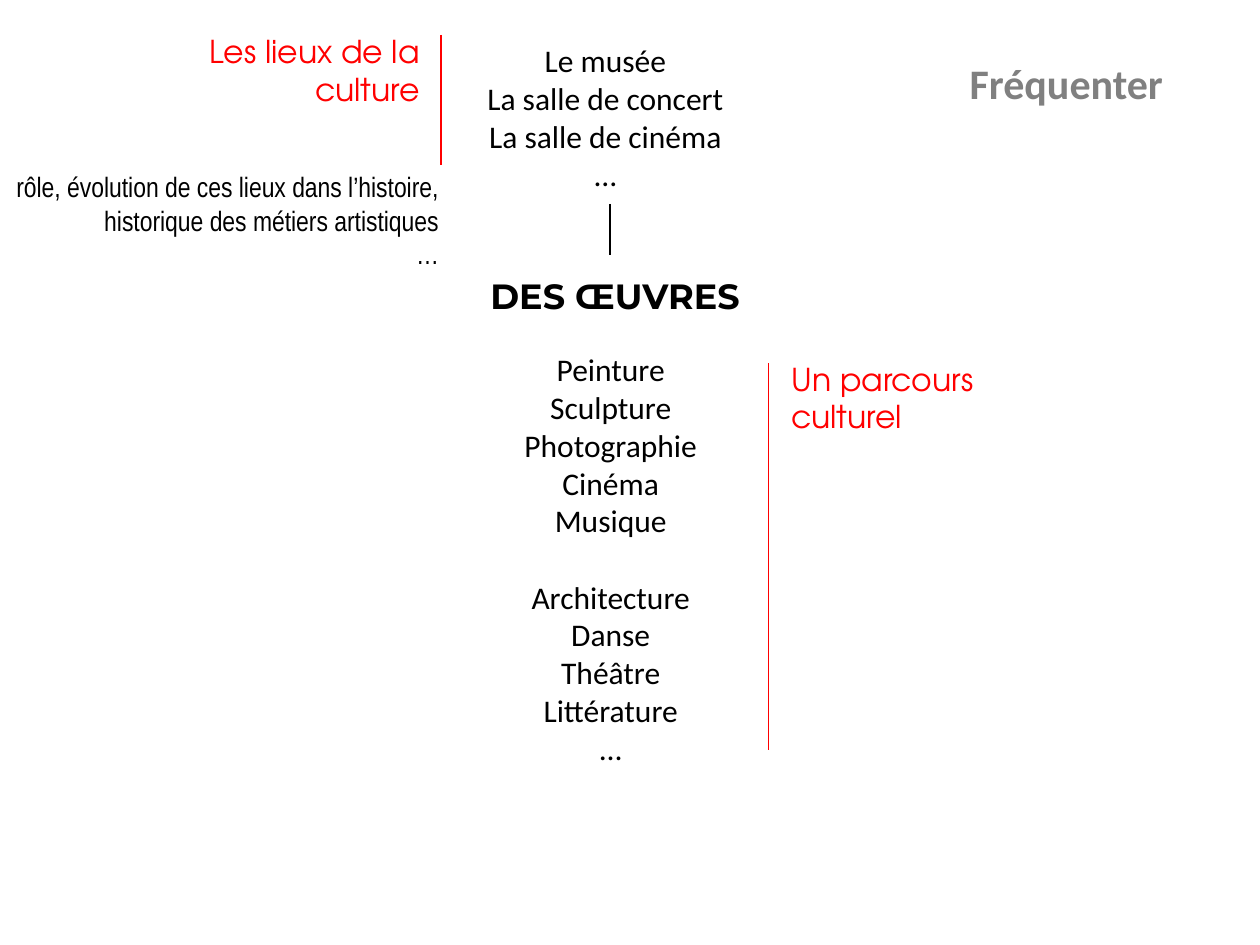
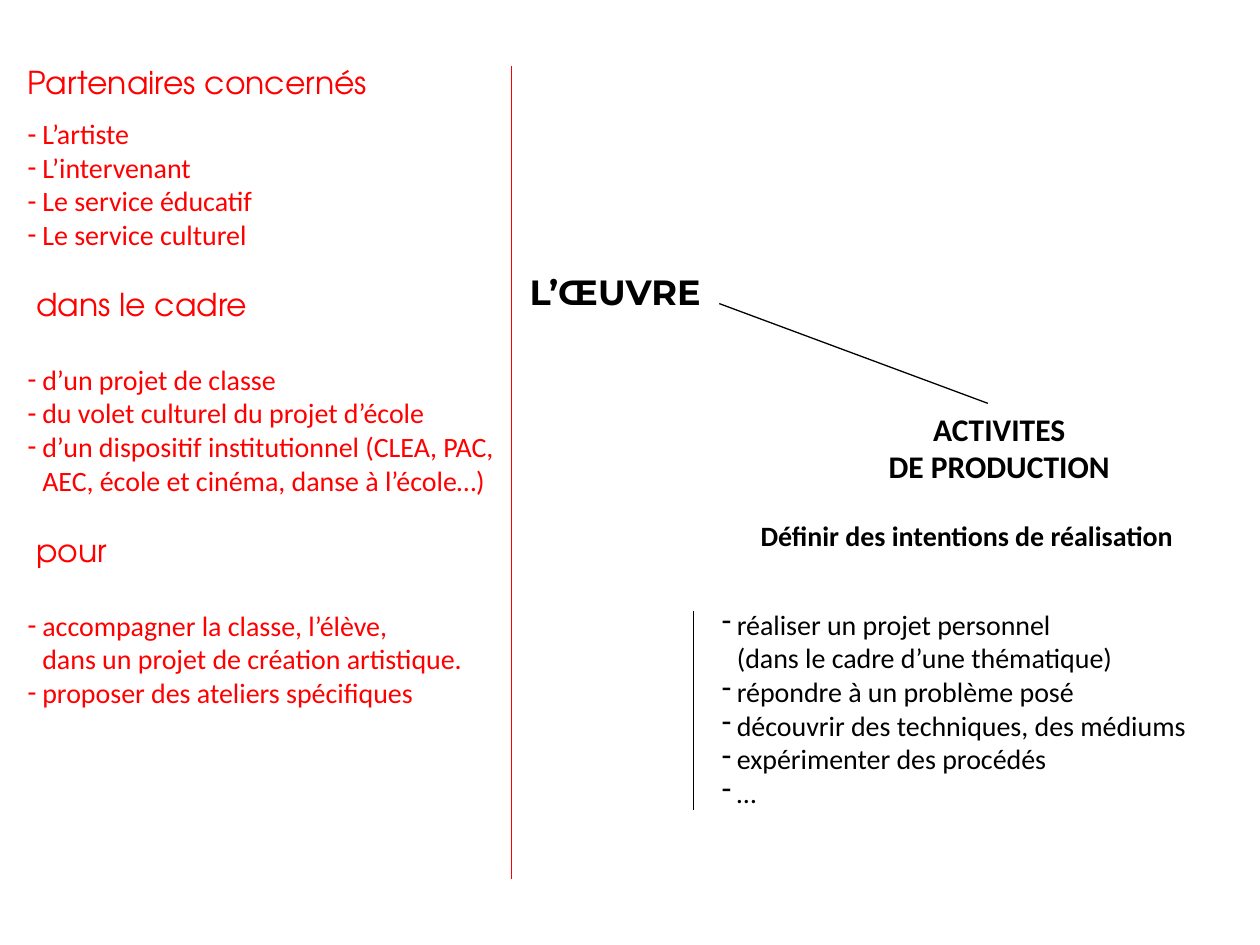
import pptx
import pptx.dml.color
import pptx.enum.shapes
import pptx.enum.text
import pptx.oxml.ns
import pptx.util
from lxml import etree

Pt = pptx.util.Pt
ALIGN = pptx.enum.text.PP_ALIGN

COLOURS = {"black": "000000", "red": "FF0000", "grey": "808080"}

# font, size, bold
STYLES = {
    "title": ("Montserrat", 20, True),
    "section": ("Calibri", 24, True),
    "heading": ("TeX Gyre Adventor", 18, False),
    "list": ("Calibri", 18, False),
    "activity": ("Calibri", 18, True),
    "detail": ("Calibri", 16, False),
    "intention": ("Calibri", 16, True),
    "history": ("Arial Narrow", 16, False),
}
DASH_INDENT = 8.5


def write_text(shape, box, lines, colour="black", alignment=ALIGN.LEFT):
    """Place the shape and fill it with (text, style, space before, left indent) lines.

    A leading "- " becomes a dash bullet and a newline a line break.
    """
    shape.left, shape.top, shape.width, shape.height = [Pt(length) for length in box]
    frame = shape.text_frame
    frame.word_wrap = True
    frame.auto_size = pptx.enum.text.MSO_AUTO_SIZE.NONE
    frame.vertical_anchor = pptx.enum.text.MSO_ANCHOR.TOP
    for number, (text, style, gap, indent) in enumerate(lines):
        paragraph = frame.add_paragraph() if number else frame.paragraphs[0]
        paragraph.alignment = alignment
        paragraph.space_before = Pt(gap)
        properties = paragraph._p.get_or_add_pPr()
        bulleted = text.startswith("- ")
        hanging = DASH_INDENT if bulleted else 0
        properties.set("marL", str(Pt(indent + hanging)))
        properties.set("indent", str(Pt(-hanging)))
        bullet_tag = "a:buChar" if bulleted else "a:buNone"
        bullet = etree.SubElement(properties, pptx.oxml.ns.qn(bullet_tag))
        if bulleted:
            bullet.set("char", "-")
        for part_number, part in enumerate(text.removeprefix("- ").split("\n")):
            if part_number:
                paragraph.add_line_break()
            run = paragraph.add_run()
            run.text = part
            run.font.name, size, run.font.bold = STYLES[style]
            run.font.size = Pt(size)
            run.font.color.rgb = pptx.dml.color.RGBColor.from_string(COLOURS[colour])


def add_line(slide, ends, colour):
    line = slide.shapes.add_connector(
        pptx.enum.shapes.MSO_CONNECTOR.STRAIGHT, *[Pt(length) for length in ends])
    line.line.width = Pt(0.75)
    line.line.color.rgb = pptx.dml.color.RGBColor.from_string(COLOURS[colour])
    etree.SubElement(line._element.spPr, pptx.oxml.ns.qn("a:effectLst"))


presentation = pptx.Presentation()
presentation.slide_width, presentation.slide_height = Pt(720), Pt(540)
layout = presentation.slide_layouts[1]

# Slide 1: works, places of culture and cultural path
works = ["Peinture", "Sculpture", "Photographie", "Cinéma", "Musique",
         "Architecture", "Danse", "Théâtre", "Littérature", "…"]
places = ["Le musée", "La salle de concert", "La salle de cinéma", "…"]
history = ["rôle, évolution de ces lieux dans l’histoire,",
           "historique des métiers artistiques", "…"]

slide = presentation.slides.add_slide(layout)
write_text(slide.shapes.title, (201.5, 153.5, 300, 32),
           [("DES ŒUVRES", "title", 0, 0)], alignment=ALIGN.CENTER)
write_text(slide.placeholders[1], (281, 196.5, 136, 245),
           [(work, "list", 22 if work == "Architecture" else 0, 0) for work in works],
           alignment=ALIGN.CENTER)
for box, texts, style, colour, alignment in [
    ((173, 20, 346, 126), places, "list", "black", ALIGN.CENTER),
    ((99, 15, 148, 51), ["Les lieux de la culture"], "heading", "red", ALIGN.RIGHT),
    ((0, 93.5, 258, 98), history, "history", "black", ALIGN.RIGHT),
    ((445, 202, 136, 51), ["Un parcours culturel"], "heading", "red", ALIGN.LEFT),
    ((547, 29.5, 143.5, 36), ["Fréquenter"], "section", "grey", ALIGN.LEFT),
]:
    write_text(slide.shapes.add_textbox(0, 0, 0, 0), box,
               [(text, style, 0, 0) for text in texts], colour, alignment)
for ends, colour in [
    ((348.5, 116.5, 348.5, 145.5), "black"),
    ((252, 20, 252, 94.5), "red"),
    ((439, 207.5, 439, 428.5), "red"),
]:
    add_line(slide, ends, colour)

# Slide 2: partners and production activities around the work
# heading, space before it, its indent, space after it, items
partner_sections = [
    ("Partenaires concernés", 0, 0, 9,
     ["- L’artiste", "- L’intervenant", "- Le service éducatif", "- Le service culturel"]),
    ("dans le cadre", 19.5, 5, 22.5,
     ["- d’un projet de classe", "- du volet culturel du projet d’école",
      "- d’un dispositif institutionnel (CLEA, PAC, AEC, école et cinéma, danse à l’école…)"]),
    ("pour", 19.5, 5, 22.5,
     ["- accompagner la classe, l’élève,\ndans un projet de création artistique.",
      "- proposer des ateliers spécifiques"]),
]
partner_lines = []
for heading, space_before, indent, space_after, items in partner_sections:
    partner_lines.append((heading, "heading", space_before, indent))
    for number, item in enumerate(items):
        partner_lines.append((item, "detail", 0 if number else space_after, 0))
productions = [
    "- réaliser un projet personnel\n(dans le cadre d’une thématique)",
    "- répondre à un problème posé",
    "- découvrir des techniques, des médiums",
    "- expérimenter des procédés",
    "- …",
]

slide = presentation.slides.add_slide(layout)
write_text(slide.shapes.title, (201.5, 151, 300, 32),
           [("L’ŒUVRE", "title", 0, 0)], alignment=ALIGN.CENTER)
write_text(slide.placeholders[1], (8.5, 32.5, 300, 500), partner_lines, "red")
for box, texts, style, alignment in [
    ((405.5, 343.5, 310, 156), productions, "detail", ALIGN.LEFT),
    ((422.5, 230.5, 297, 73), ["ACTIVITES", "DE PRODUCTION"], "activity", ALIGN.CENTER),
    ((427.5, 292.5, 290, 27), ["Définir des intentions de réalisation"],
     "intention", ALIGN.LEFT),
]:
    write_text(slide.shapes.add_textbox(0, 0, 0, 0), box,
               [(text, style, 0, 0) for text in texts], alignment=alignment)
for ends, colour in [
    ((396.5, 349, 396.5, 463), "black"),
    ((411, 173.5, 564.5, 230.5), "black"),
    ((292.5, 37.5, 292.5, 502.5), "red"),
]:
    add_line(slide, ends, colour)

presentation.save("out.pptx")
